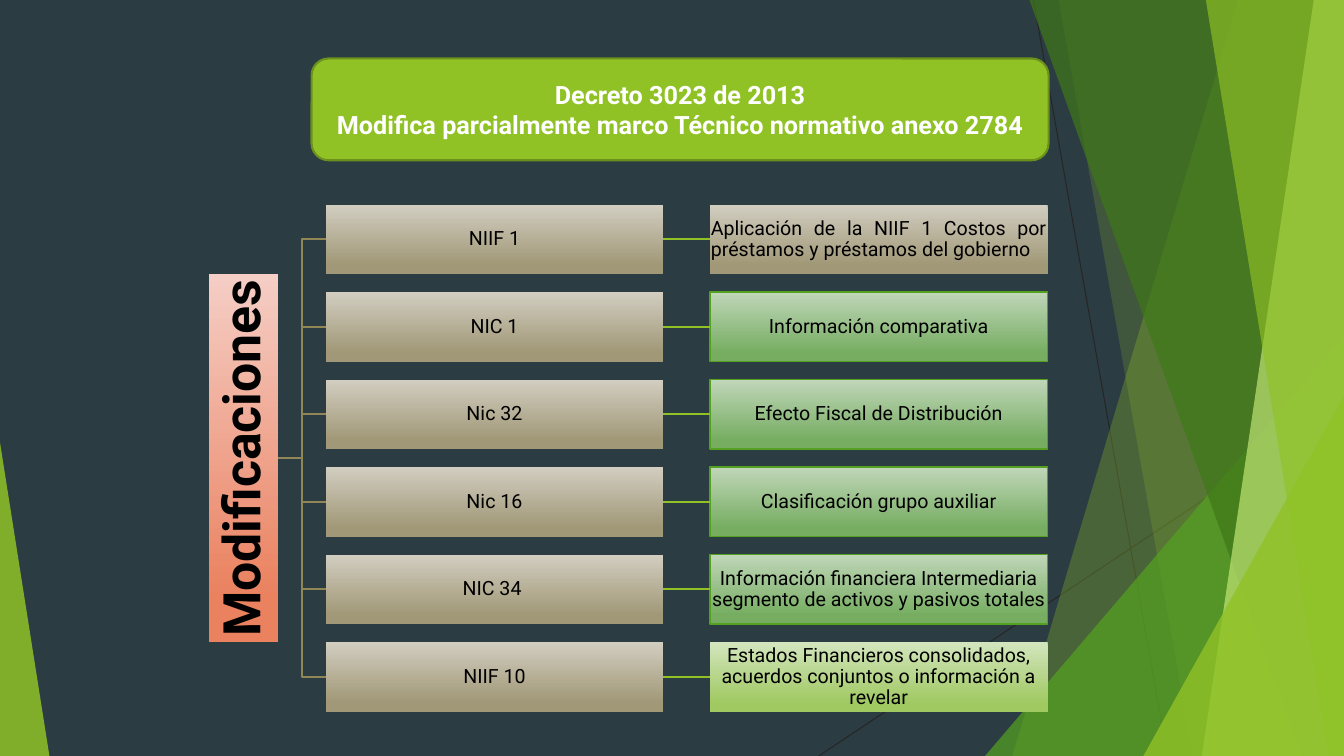
from dataclasses import dataclass

from lxml.etree import SubElement
from pptx import Presentation
from pptx.dml.color import RGBColor
from pptx.enum.shapes import MSO_CONNECTOR, MSO_SHAPE
from pptx.enum.text import MSO_ANCHOR, PP_ALIGN
from pptx.oxml.ns import qn
from pptx.shapes.autoshape import Shape
from pptx.shapes.connector import Connector
from pptx.util import Inches, Pt

FONT = "Roboto"
COLORS = {
    "background": "2C3C43", "hairline": "262626", "lime": "90C226",
    "lime_edge": "6B901C", "green": "54A021", "forest": "3F7819",
    "pale_lime": "C0E474", "bracket": "918655",
    "white": "FFFFFF", "black": "000000",
    "salmon_top": "F5CEC5", "salmon_bottom": "EA815F",
    "tan_top": "D1CDC0", "tan_bottom": "A19877",
    "sage_top": "C0D6B9", "sage_bottom": "76AD61",
    "light_lime_top": "D3E5BE", "light_lime_bottom": "A0C962",
}


@dataclass
class Facet:
    points: list[tuple[float, float]]
    color: str
    opacity: int


@dataclass
class Wedge:
    box: tuple[float, float, float, float]
    apex: float
    color: str
    opacity: int


@dataclass
class Change:
    standard: str
    detail: str
    shade: str = "sage"
    edge: str | None = "green"
    align: PP_ALIGN = PP_ALIGN.CENTER


DECORATION = [
    Facet([(12.28, 0), (13.33, 0), (13.33, 7.5), (10.04, 7.5)], "lime", 30),
    Facet([(10.5, 0), (13.33, 0), (13.33, 7.5), (11.83, 7.5)], "lime", 20),
    Wedge((9.77, 3.33, 3.56, 4.17), 1, "green", 72),
    Facet([(10.21, 0), (13.33, 0), (13.33, 7.5), (12.91, 7.5)], "forest", 70),
    Facet([(13.03, 0), (13.33, 0), (13.33, 7.5), (11.92, 7.5)], "pale_lime", 70),
    Facet([(11.96, 0), (13.33, 0), (13.33, 7.5), (13.18, 7.5)], "lime", 65),
    Wedge((11.34, 3.93, 1.99, 3.57), 1, "lime", 80),
    Wedge((0, 4.39, 0.49, 3.11), 0, "lime", 85),
]

CHANGES = [
    Change("NIIF 1", "Aplicación de la NIIF 1 Costos por préstamos y préstamos del gobierno",
           "tan", None, PP_ALIGN.JUSTIFY),
    Change("NIC 1", "Información comparativa"),
    Change("Nic 32", "Efecto Fiscal de Distribución"),
    Change("Nic 16", "Clasificación grupo auxiliar"),
    Change("NIC 34 ", "Información financiera Intermediaria segmento de activos y pasivos totales"),
    Change("NIIF 10", "Estados Financieros consolidados, acuerdos conjuntos o información a revelar",
           "light_lime", None),
]

FIRST_TOP, LAST_TOP = 2.03, 6.37
PITCH = (LAST_TOP - FIRST_TOP) / (len(CHANGES) - 1)
STANDARD_LEFT, DETAIL_LEFT = 3.23, 7.04
BOX_WIDTH, BOX_HEIGHT = 3.35, 0.69


def rgb(name: str) -> RGBColor:
    return RGBColor.from_string(COLORS[name])


def fill_translucent(shape: Shape, color: str, opacity: int) -> None:
    shape.shadow.inherit = False
    shape.line.fill.background()
    shape.fill.solid()
    shape.fill.fore_color.rgb = rgb(color)
    tint = shape.fill._xPr.find(f".//{qn('a:srgbClr')}")
    SubElement(tint, qn("a:alpha"), val=str(opacity * 1000))


def draw_facet(shapes, facet: Facet) -> None:
    corners = [(Inches(x), Inches(y)) for x, y in facet.points]
    builder = shapes.build_freeform(*corners[0])
    builder.add_line_segments(corners[1:], close=True)
    fill_translucent(builder.convert_to_shape(), facet.color, facet.opacity)


def draw_wedge(shapes, wedge: Wedge) -> None:
    triangle = shapes.add_shape(MSO_SHAPE.ISOSCELES_TRIANGLE, *map(Inches, wedge.box))
    triangle.adjustments[0] = wedge.apex
    fill_translucent(triangle, wedge.color, wedge.opacity)


def draw_line(shapes, start: tuple[float, float], end: tuple[float, float],
              color: str, width: float, kind=MSO_CONNECTOR.STRAIGHT) -> Connector:
    line = shapes.add_connector(kind, *map(Inches, start + end))
    line.line.color.rgb = rgb(color)
    line.line.width = Pt(width)
    SubElement(line._element.spPr, qn("a:effectLst"))
    return line


def join(shapes, source: Shape, target: Shape, color: str, kind: MSO_CONNECTOR) -> None:
    """Link the right side of one box to the left side of another."""
    link = draw_line(shapes, (0, 0), (1, 1), color, 1.5, kind)
    link.begin_connect(source, 3)
    link.end_connect(target, 1)


def write(shape: Shape, text: str, size: float, color: str, bold: bool = False,
          align: PP_ALIGN = PP_ALIGN.CENTER, spacing: float = 0.9) -> None:
    frame = shape.text_frame
    frame.text = text
    frame.word_wrap = True
    frame.vertical_anchor = MSO_ANCHOR.MIDDLE
    for paragraph in frame.paragraphs:
        paragraph.alignment = align
        paragraph.line_spacing = spacing
        for run in paragraph.runs:
            run.font.name = FONT
            run.font.size = Pt(size)
            run.font.bold = bold
            run.font.color.rgb = rgb(color)


def draw_box(shapes, box: tuple[float, float, float, float], shade: str,
             inset: float, edge: str | None = None) -> Shape:
    rect = shapes.add_shape(MSO_SHAPE.RECTANGLE, *map(Inches, box))
    rect.shadow.inherit = False
    rect.fill.gradient()
    rect.fill.gradient_angle = 270
    top, bottom = rect.fill.gradient_stops
    top.color.rgb, top.position = rgb(f"{shade}_top"), 0
    bottom.color.rgb, bottom.position = rgb(f"{shade}_bottom"), 0.88
    if edge:
        rect.line.color.rgb = rgb(edge)
        rect.line.width = Pt(1)
    else:
        rect.line.fill.background()
    frame = rect.text_frame
    frame.margin_left = frame.margin_right = Inches(inset)
    frame.margin_top = frame.margin_bottom = Inches(inset)
    return rect


def main() -> None:
    deck = Presentation()
    deck.slide_width, deck.slide_height = Inches(13.33), Inches(7.5)
    slide = deck.slides.add_slide(deck.slide_layouts[6])
    slide.background.fill.solid()
    slide.background.fill.fore_color.rgb = rgb("background")
    shapes = slide.shapes

    # Decorative facets
    draw_line(shapes, (10.25, 0), (11.58, 7.5), "hairline", 0.75)
    draw_line(shapes, (13.33, 4.03), (8.12, 7.5), "hairline", 0.75)
    for part in DECORATION:
        if isinstance(part, Facet):
            draw_facet(shapes, part)
        else:
            draw_wedge(shapes, part)

    # Decree heading
    decree = shapes.add_shape(MSO_SHAPE.ROUNDED_RECTANGLE, *map(Inches, (3.09, 0.58, 7.31, 1.01)))
    decree.shadow.inherit = False
    decree.fill.solid()
    decree.fill.fore_color.rgb = rgb("lime")
    decree.line.color.rgb = rgb("lime_edge")
    decree.line.width = Pt(1.5)
    write(decree, "Decreto 3023 de 2013\nModifica parcialmente marco Técnico normativo anexo 2784",
          18, "white", bold=True, spacing=1.0)

    # Root of the tree, reading upwards
    root = draw_box(shapes, (2.07, 2.72, 0.69, 3.65), "salmon", 0.03)
    write(root, "Modificaciones", 37, "black", bold=True)
    root.text_frame._txBody.bodyPr.set("vert", "vert270")

    # Standards and what changes in each
    for row, change in enumerate(CHANGES):
        top = FIRST_TOP + row * PITCH
        standard = draw_box(shapes, (STANDARD_LEFT, top, BOX_WIDTH, BOX_HEIGHT), "tan", 0.01)
        write(standard, change.standard, 14, "black")
        detail = draw_box(shapes, (DETAIL_LEFT, top, BOX_WIDTH, BOX_HEIGHT),
                          change.shade, 0.01, change.edge)
        write(detail, change.detail, 14, "black", align=change.align)
        join(shapes, root, standard, "bracket", MSO_CONNECTOR.ELBOW)
        join(shapes, standard, detail, "lime", MSO_CONNECTOR.STRAIGHT)

    deck.save("out.pptx")


if __name__ == "__main__":
    main()
